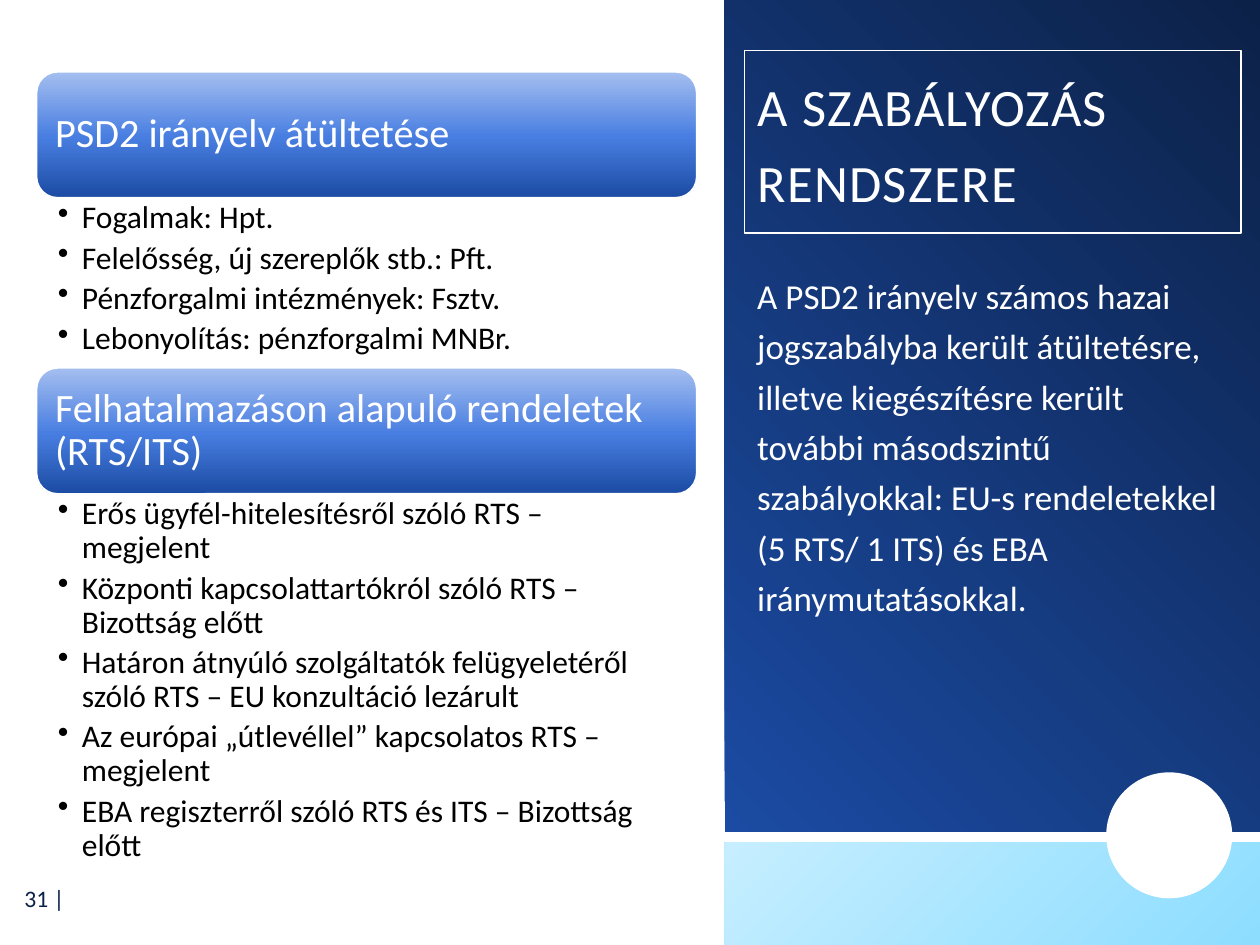
import copy
from dataclasses import dataclass

import pptx
import pptx.dml.color
import pptx.enum.shapes
import pptx.enum.text
import pptx.oxml
import pptx.oxml.ns
import pptx.util

Inches = pptx.util.Inches
Pt = pptx.util.Pt
ALIGN = pptx.enum.text.PP_ALIGN
ANCHOR = pptx.enum.text.MSO_ANCHOR
SHAPE = pptx.enum.shapes.MSO_SHAPE


@dataclass(frozen=True)
class Theme:
    font: str = "Calibri"
    white: str = "FFFFFF"
    black: str = "000000"
    navy: str = "0C2148"
    panel: tuple = ((0, "1B4BA3"), (1, "0C2148"))
    strip: tuple = ((0, "8DDDFF"), (1, "C6EEFF"))
    header: tuple = ((0, "A4BEF0"), (0.52, "487EE1"), (1, "1B4BA3"))
    title_size: float = 30
    header_size: float = 23
    body_size: float = 20
    list_size: float = 18
    number_size: float = 13.5


def rgb(value):
    return pptx.dml.color.RGBColor.from_string(value)


def write(shape, *lines, size, color, font, align=ALIGN.LEFT, anchor=ANCHOR.TOP,
          insets=(0.1, 0.05, 0.1, 0.05), line_spacing=1.0, after=0,
          bullet=None, indent=0, tracking=0):
    frame = shape.text_frame
    frame.word_wrap = True
    frame.auto_size = pptx.enum.text.MSO_AUTO_SIZE.NONE
    frame.vertical_anchor = anchor
    (frame.margin_left, frame.margin_top,
     frame.margin_right, frame.margin_bottom) = map(Inches, insets)
    for index, line in enumerate(lines):
        paragraph = frame.add_paragraph() if index else frame.paragraphs[0]
        properties = paragraph._p.get_or_add_pPr()
        properties.set("marL", str(Inches(indent)))
        properties.set("indent", str(-Inches(indent)))
        tag = "a:buChar" if bullet else "a:buNone"
        mark = pptx.oxml.parse_xml(f"<{tag} {pptx.oxml.ns.nsdecls('a')}/>")
        if bullet:
            mark.set("char", bullet)
        properties.append(mark)
        paragraph.alignment = align
        paragraph.line_spacing = line_spacing
        paragraph.space_before = Pt(0)
        paragraph.space_after = Pt(after)
        run = paragraph.add_run()
        run.text = line
        run.font.name = font
        run.font.size = Pt(size)
        run.font.color.rgb = rgb(color)
        if tracking:
            run._r.get_or_add_rPr().set("spc", str(round(tracking * 100)))


class SlideBuilder:
    """Holds the theme and the current slide, and adds each kind of element."""

    def __init__(self, slide, theme):
        self.slide = slide
        self.theme = theme

    def shape(self, kind, box, fill=None, stops=None, angle=0, border=None):
        shape = self.slide.shapes.add_shape(kind, *map(Inches, box))
        shape.shadow.inherit = False
        if stops:
            self.gradient(shape, stops, angle)
        else:
            shape.fill.solid()
            shape.fill.fore_color.rgb = rgb(fill)
        if border:
            shape.line.color.rgb = rgb(border)
            shape.line.width = Pt(1)
        else:
            shape.line.fill.background()
        return shape

    def gradient(self, shape, stops, angle):
        shape.fill.gradient()
        shape.fill.gradient_angle = angle
        stop_list = shape._element.spPr.xpath(".//a:gsLst")[0]
        for _ in stops[2:]:
            stop_list.append(copy.deepcopy(stop_list[0]))
        for stop, (position, color) in zip(shape.fill.gradient_stops, stops):
            stop.position = position
            stop.color.rgb = rgb(color)

    def text(self, box, *lines, **style):
        write(self.slide.shapes.add_textbox(*map(Inches, box)), *lines,
              font=self.theme.font, **style)

    def placeholder(self, index, box, *lines, **style):
        holder = self.slide.placeholders[index]
        holder.left, holder.top, holder.width, holder.height = map(Inches, box)
        write(holder, *lines, font=self.theme.font, color=self.theme.white,
              line_spacing=1.2, **style)
        return holder

    def section(self, top, list_height, heading, items):
        theme, left, width, header_height = self.theme, 0.29, 5.24, 1
        header = self.shape(SHAPE.ROUNDED_RECTANGLE, (left, top, width, header_height),
                            stops=theme.header, angle=270, border=theme.white)
        write(header, heading, font=theme.font, size=theme.header_size,
              color=theme.white, anchor=ANCHOR.MIDDLE, insets=(0.1,) * 4,
              line_spacing=0.9)
        self.text((left, top + header_height, width, list_height), *items,
                  size=theme.list_size, color=theme.black,
                  insets=(0.17, 0.03, 0.18, 0.03), line_spacing=0.9, after=3.6,
                  bullet="•", indent=0.19)


def main():
    theme = Theme()
    deck = pptx.Presentation()
    deck.slide_width, deck.slide_height = Inches(10), Inches(7.5)
    builder = SlideBuilder(deck.slides.add_slide(deck.slide_layouts[1]), theme)

    panel = builder.shape(SHAPE.RECTANGLE, (5.75, -0.01, 4.25, 6.61),
                          stops=theme.panel, angle=45)
    strip = builder.shape(SHAPE.RECTANGLE, (5.75, 6.69, 4.25, 0.81),
                          stops=theme.strip, angle=135)
    circle = builder.shape(SHAPE.OVAL, (8.78, 6.13, 1, 1), fill=theme.white)
    tree = builder.slide.shapes._spTree
    for depth, backdrop in enumerate((panel, strip, circle)):
        tree.insert(2 + depth, backdrop._element)

    title = builder.placeholder(
        0, (5.91, 0.4, 3.94, 1.45), "A SZABÁLYOZÁS RENDSZERE",
        size=theme.title_size, anchor=ANCHOR.BOTTOM,
        insets=(0.1, 0.05, 0.1, 0.16), tracking=0.8)
    title.line.color.rgb = rgb(theme.white)
    title.line.width = Pt(0.75)
    builder.placeholder(
        1, (5.91, 2.06, 3.94, 4.07),
        "A PSD2 irányelv számos hazai jogszabályba került átültetésre, illetve "
        "kiegészítésre került további másodszintű szabályokkal: EU-s rendeletekkel "
        "(5 RTS/ 1 ITS) és EBA iránymutatásokkal.",
        size=theme.body_size)

    builder.section(0.57, 1.35, "PSD2 irányelv átültetése", (
        "Fogalmak: Hpt.",
        "Felelősség, új szereplők stb.: Pft.",
        "Pénzforgalmi intézmények: Fsztv.",
        "Lebonyolítás: pénzforgalmi MNBr.",
    ))
    builder.section(2.92, 3.07, "Felhatalmazáson alapuló rendeletek (RTS/ITS)", (
        "Erős ügyfél-hitelesítésről szóló RTS – megjelent",
        "Központi kapcsolattartókról szóló RTS – Bizottság előtt",
        "Határon átnyúló szolgáltatók felügyeletéről szóló RTS – EU konzultáció lezárult",
        "Az európai „útlevéllel” kapcsolatos RTS – megjelent",
        "EBA regiszterről szóló RTS és ITS – Bizottság előtt",
    ))
    builder.text((0.01, 6.94, 0.6, 0.37), "31 |", size=theme.number_size,
                 color=theme.navy, align=ALIGN.RIGHT, anchor=ANCHOR.MIDDLE)
    deck.save("out.pptx")


if __name__ == "__main__":
    main()
